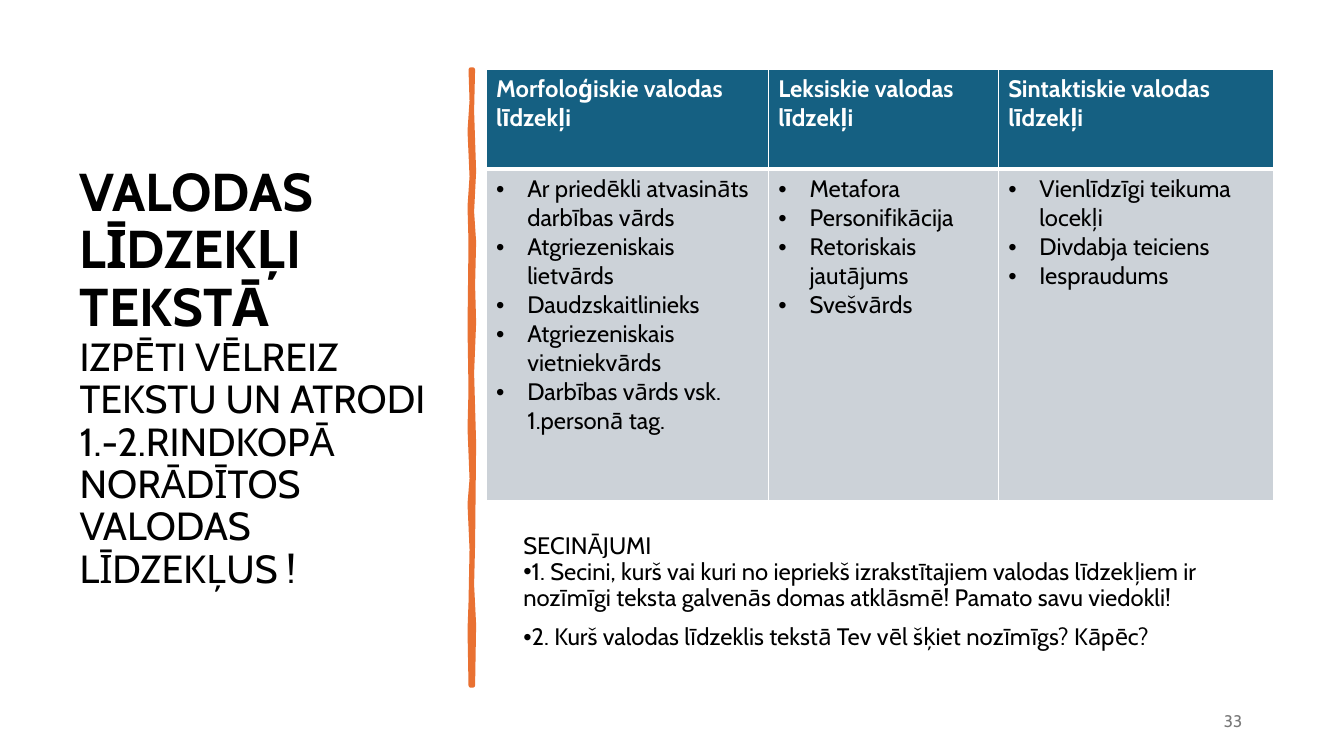
from lxml import etree
from pptx import Presentation
from pptx import util as u
from pptx.dml.color import RGBColor
from pptx.enum import text
from pptx.oxml import ns

FONT = "Cabin"
BLACK, WHITE, ORANGE = "000000", "FFFFFF", "E97132"
HEADER_FILL, BODY_FILL, GREY = "156082", "CCD2D8", "797979"


def color(value):
    return RGBColor.from_string(value)


def style(para, size, fill, bold=False, bullet=None, margin=0, indent=0):
    """Set the font of a paragraph and its bullet with a hanging indent."""
    para.font.name, para.font.size, para.font.bold = FONT, u.Pt(size), bold
    para.font.color.rgb = color(fill)
    props = para._p.get_or_add_pPr()
    props.set("marL", str(u.Inches(margin)))
    props.set("indent", str(u.Inches(indent)))
    if bullet:
        etree.SubElement(props, ns.qn("a:buFont")).set("typeface", "Arial")
        etree.SubElement(props, ns.qn("a:buChar")).set("char", bullet)
        # The default run properties come last in the schema
        props.append(props.find(ns.qn("a:defRPr")))
    else:
        props.insert_element_before(
            etree.Element(ns.qn("a:buNone")), "a:tabLst", "a:defRPr")


deck = Presentation()
deck.slide_width, deck.slide_height = u.Inches(13.33), u.Inches(7.5)
page = deck.slides.add_slide(deck.slide_layouts[1])
title, conclusions = page.placeholders

# Title with the task below it
title.left, title.top = u.Inches(0.69), u.Inches(0.7)
title.width, title.height = u.Inches(3.85), u.Inches(6.11)
frame = title.text_frame
frame.auto_size = text.MSO_AUTO_SIZE.NONE
frame.vertical_anchor = text.MSO_ANCHOR.MIDDLE
para = frame.paragraphs[0]
para.alignment, para.line_spacing = text.PP_ALIGN.LEFT, 0.9
heading = para.add_run()
heading.text = "VALODAS LĪDZEKĻI TEKSTĀ"
para.add_line_break()
task = para.add_run()
task.text = ("IZPĒTI VĒLREIZ TEKSTU UN ATRODI 1.-2.RINDKOPĀ "
             "NORĀDĪTOS VALODAS LĪDZEKĻUS !")
for span, size, bold in ((heading, 38, True), (task, 28, False)):
    span.font.name, span.font.size, span.font.bold = FONT, u.Pt(size), bold
    span.font.color.rgb = color(BLACK)

# Hand-drawn divider: down the left edge, up the right edge
edges = [
    (4.67, 0.69), (4.68, 1), (4.66, 1.3), (4.67, 1.52), (4.68, 1.75),
    (4.66, 2.05), (4.67, 2.4), (4.66, 3.25), (4.67, 3.87), (4.66, 4.25),
    (4.68, 4.75), (4.66, 5), (4.68, 5.45), (4.67, 5.98), (4.66, 6.25),
    (4.67, 6.8), (4.69, 6.8), (4.7, 6.2), (4.68, 5.8), (4.69, 5.4),
    (4.7, 4.4), (4.68, 3.7), (4.7, 3.2), (4.69, 2.83), (4.7, 2.4),
    (4.68, 2.1), (4.7, 1.7), (4.68, 1.1), (4.69, 0.69),
]
points = [(u.Inches(x), u.Inches(y)) for x, y in edges]
builder = page.shapes.build_freeform(*points[0])
builder.add_line_segments(points[1:], close=True)
divider = builder.convert_to_shape()
divider.shadow.inherit = False
divider.fill.solid()
divider.fill.fore_color.rgb = color(ORANGE)
divider.line.color.rgb = color(ORANGE)
divider.line.width = u.Pt(3.25)

# Conclusions
conclusions.left, conclusions.top = u.Inches(5.09), u.Inches(5.25)
conclusions.width, conclusions.height = u.Inches(7.54), u.Inches(1.56)
frame = conclusions.text_frame
frame.auto_size = text.MSO_AUTO_SIZE.NONE
lines = [
    ("SECINĀJUMI", None, 0, 0),
    ("1. Secini, kurš vai kuri no iepriekš izrakstītajiem valodas līdzekļiem "
     "ir nozīmīgi teksta galvenās domas atklāsmē! Pamato savu viedokli!",
     "•", -0.25, 0),
    ("2. Kurš valodas līdzeklis tekstā Tev vēl šķiet nozīmīgs? Kāpēc?",
     "•", -0.25, 10),
]
for index, (words, bullet, indent, before) in enumerate(lines):
    para = frame.add_paragraph() if index else frame.paragraphs[0]
    para.text = words
    para.line_spacing, para.space_before = 0.9, u.Pt(before)
    style(para, 17, BLACK, bullet=bullet, indent=indent)

# Table of language devices
columns = [
    (2.8, "Morfoloģiskie valodas līdzekļi",
     ["Ar priedēkli atvasināts darbības vārds", "Atgriezeniskais lietvārds",
      "Daudzskaitlinieks", "Atgriezeniskais vietniekvārds",
      "Darbības vārds vsk. 1.personā tag."]),
    (2.28, "Leksiskie valodas līdzekļi",
     ["Metafora", "Personifikācija", "Retoriskais jautājums", "Svešvārds"]),
    (2.73, "Sintaktiskie valodas līdzekļi",
     ["Vienlīdzīgi teikuma locekļi", "Divdabja teiciens", "Iespraudums"]),
]
table = page.shapes.add_table(
    2, 3, u.Inches(4.82), u.Inches(0.69), u.Inches(7.81), u.Inches(4.28)).table
table.rows[0].height, table.rows[1].height = u.Inches(0.99), u.Inches(3.29)
for number, (width, header, devices) in enumerate(columns):
    table.columns[number].width = u.Inches(width)
    for row, items in enumerate(([header], devices)):
        cell = table.cell(row, number)
        cell.fill.solid()
        cell.fill.fore_color.rgb = color(BODY_FILL if row else HEADER_FILL)
        cell.text_frame.text = "\n".join(items)
        for para in cell.text_frame.paragraphs:
            if row:
                style(para, 17, BLACK, bullet="•", margin=0.31, indent=-0.31)
            else:
                style(para, 17, WHITE, bold=True)
        # White borders, thicker between header and body
        thick = "T" if row else "B"
        for place, side in enumerate("LRTB"):
            border = etree.Element(ns.qn("a:ln" + side))
            border.set("w", str(u.Pt(3 if side == thick else 1)))
            fill = etree.SubElement(border, ns.qn("a:solidFill"))
            etree.SubElement(fill, ns.qn("a:srgbClr")).set("val", WHITE)
            cell._tc.get_or_add_tcPr().insert(place, border)

# Page number
box = page.shapes.add_textbox(
    u.Inches(9.42), u.Inches(6.95), u.Inches(3), u.Inches(0.4))
box.text_frame.word_wrap = True
box.text_frame.vertical_anchor = text.MSO_ANCHOR.MIDDLE
para = box.text_frame.paragraphs[0]
para.text = "33"
para.alignment = text.PP_ALIGN.RIGHT
style(para, 12, GREY)

deck.save("out.pptx")
